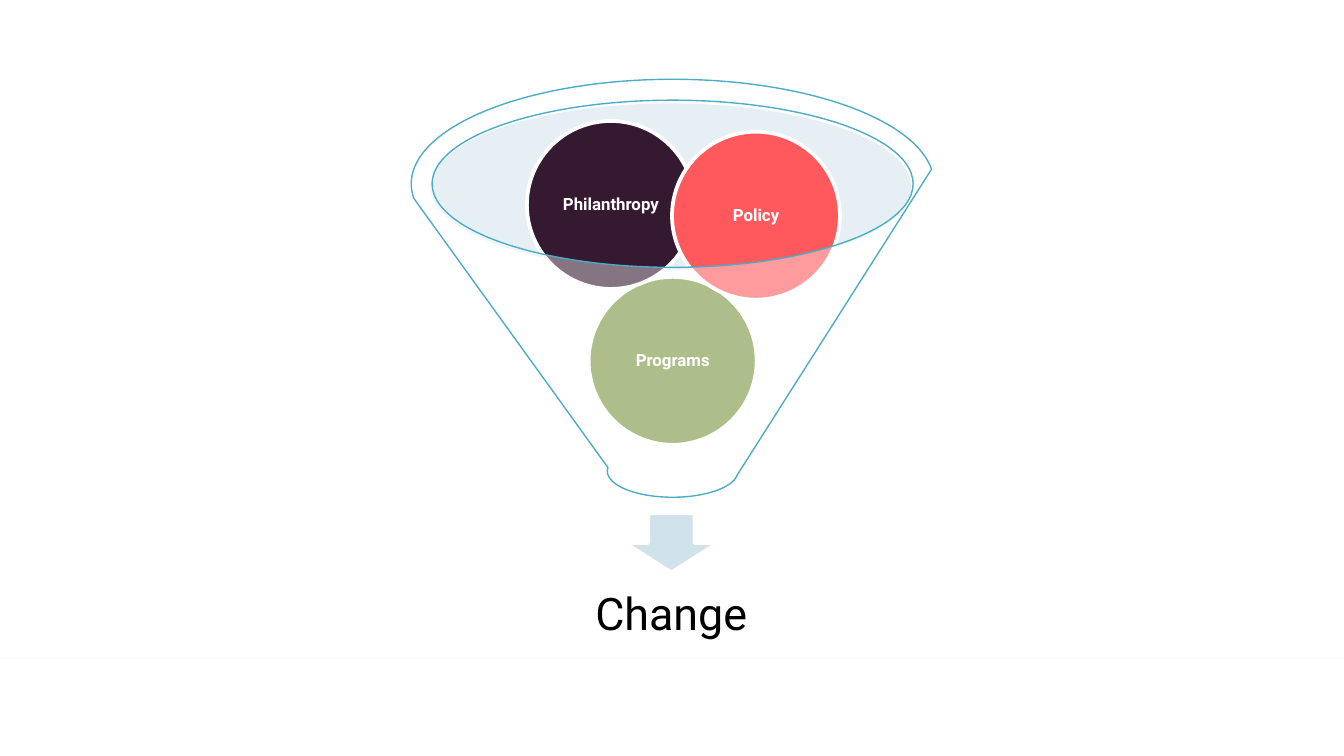
from dataclasses import dataclass

from lxml import etree
from pptx import Presentation
from pptx import util as u
from pptx.dml.color import RGBColor
from pptx.enum import shapes, text
from pptx.oxml.ns import qn

COLS, ROWS = 100, 56.25
CELL = u.Inches(10) // COLS
KIND = shapes.MSO_SHAPE


@dataclass(frozen=True)
class Theme:
    font: str = "Roboto"
    white: str = "FFFFFF"
    black: str = "000000"
    rim: str = "C1DBE5"
    arrow: str = "D0E3EA"
    edge: str = "4BACC6"
    green: str = "77933C"
    plum: str = "351931"
    coral: str = "FF585D"
    label: int = 9
    result: int = 24


THEME = Theme()


def grid(*cells):
    return [round(n * CELL) for n in cells]


def fade(node, share):
    """Set the opacity, in percent, of the colour inside a node."""
    color = node.find(".//" + qn("a:srgbClr"))
    etree.SubElement(color, qn("a:alpha"), val=str(share * 1000))


def shape(group, kind, box, fill, line=None, width=2, alpha=None):
    item = group.add_shape(kind, *grid(*box))
    item.shadow.inherit = False
    item.fill.solid()
    item.fill.fore_color.rgb = RGBColor.from_string(fill)
    if alpha:
        fade(item._element.spPr.find(qn("a:solidFill")), alpha)
    if line:
        item.line.color.rgb = RGBColor.from_string(line)
        item.line.width = u.Pt(width)
    else:
        item.line.fill.background()
    return item


def label(group, words, box, size, color, inset, bold=False):
    frame = group.add_textbox(*grid(*box)).text_frame
    frame.word_wrap = True
    frame.vertical_anchor = text.MSO_ANCHOR.MIDDLE
    frame.margin_left = frame.margin_right = u.Inches(inset)
    frame.margin_top = frame.margin_bottom = u.Inches(inset)
    para = frame.paragraphs[0]
    para.text = words
    para.alignment = text.PP_ALIGN.CENTER
    para.line_spacing = 0.9
    font = para.font
    font.name, font.size, font.bold = THEME.font, u.Pt(size), bold
    font.color.rgb = RGBColor.from_string(color)


def ball(group, words, left, top, fill, side=12.5, inner=8.8):
    """Draw a circle with its label in the square that fits inside it."""
    shape(group, KIND.OVAL, (left, top, side, side), fill, THEME.white)
    gap = (side - inner) / 2
    label(group, words, (left + gap, top + gap, inner, inner),
          THEME.label, THEME.white, 0.01, bold=True)


def footer(slide, top=49):
    """Draw the bottom band with a soft shadow."""
    band = shape(slide.shapes, KIND.RECTANGLE,
                 (0, top, COLS, ROWS - top), THEME.white)
    effects = band._element.spPr.find(qn("a:effectLst"))
    shade = etree.SubElement(
        effects, qn("a:outerShdw"), blurRad=str(u.Pt(3.1)),
        dist=str(u.Pt(1.8)), dir="5400000", rotWithShape="0")
    etree.SubElement(shade, qn("a:srgbClr"), val=THEME.black)
    fade(shade, 35)


def funnel(slide):
    group = slide.shapes.add_group_shape()
    shape(group.shapes, KIND.OVAL, (32, 7.7, 35.8, 12.4), THEME.rim, alpha=40)
    shape(group.shapes, KIND.DOWN_ARROW, (46.5, 38.2, 6.9, 4.4),
          THEME.arrow, THEME.white)
    label(group.shapes, "Change", (33.3, 41.7, 33.3, 8.3),
          THEME.result, THEME.black, 0.19)
    for words, left, top, fill in (
        ("Programs", 43.8, 20.6, THEME.green),
        ("Philanthropy", 39.2, 9, THEME.plum),
        ("Policy", 50, 9.8, THEME.coral),
    ):
        ball(group.shapes, words, left, top, fill)
    shape(group.shapes, KIND.FUNNEL, (30.6, 5.9, 38.9, 31.1),
          THEME.white, THEME.edge, 0.75, alpha=40)


def main():
    deck = Presentation()
    deck.slide_width, deck.slide_height = grid(COLS, ROWS)
    slide = deck.slides.add_slide(deck.slide_layouts[6])
    funnel(slide)
    footer(slide)
    deck.save("out.pptx")


if __name__ == "__main__":
    main()
